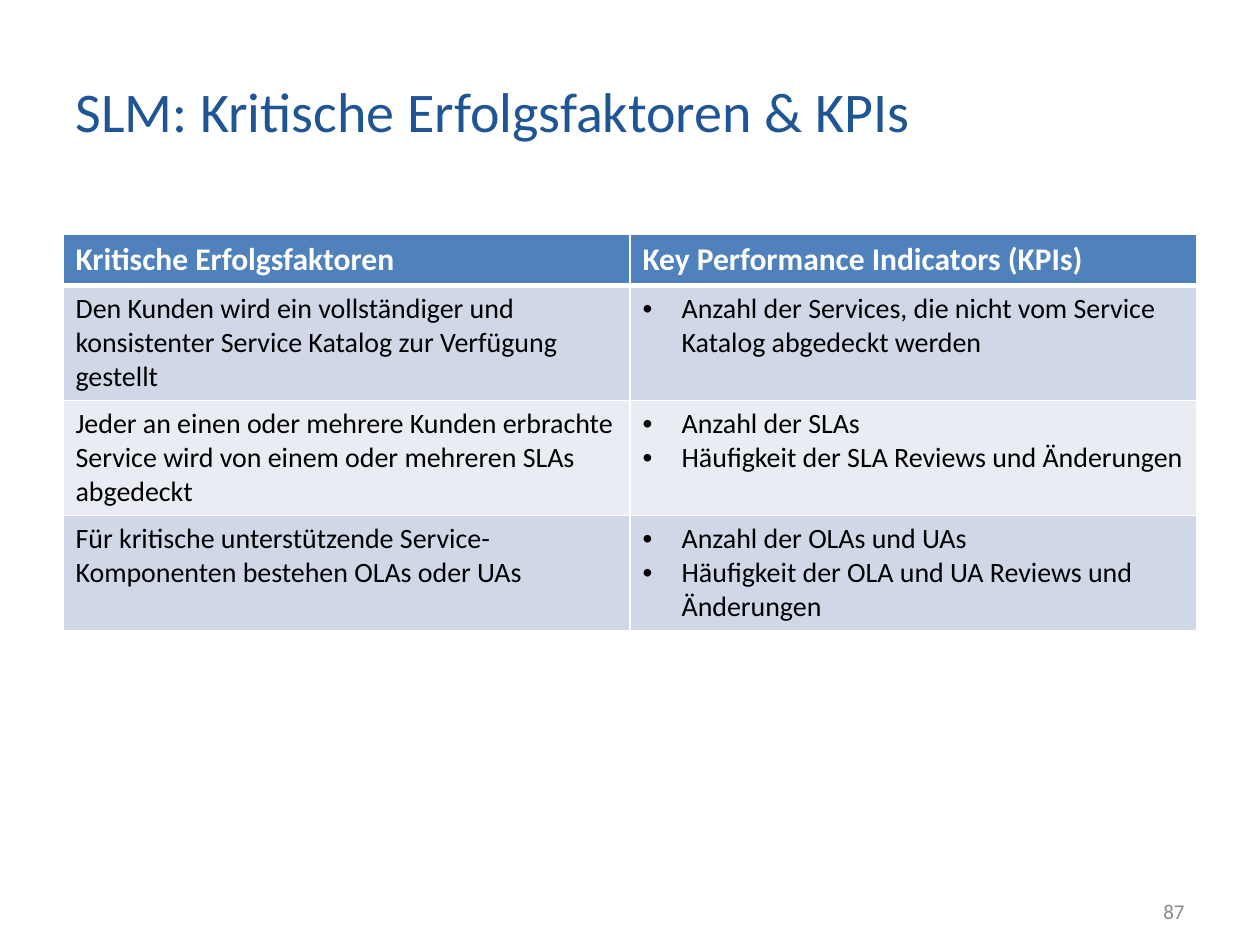
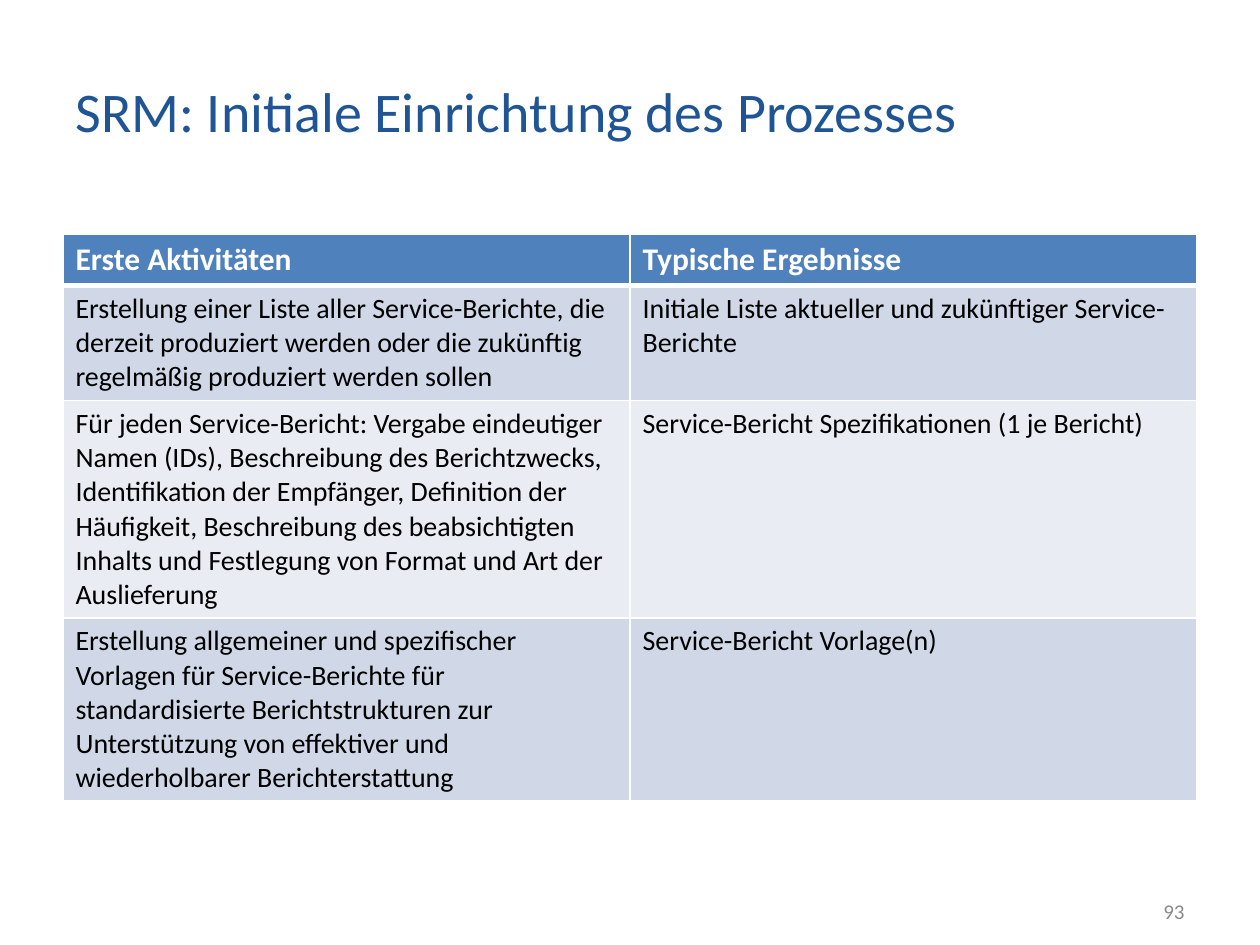
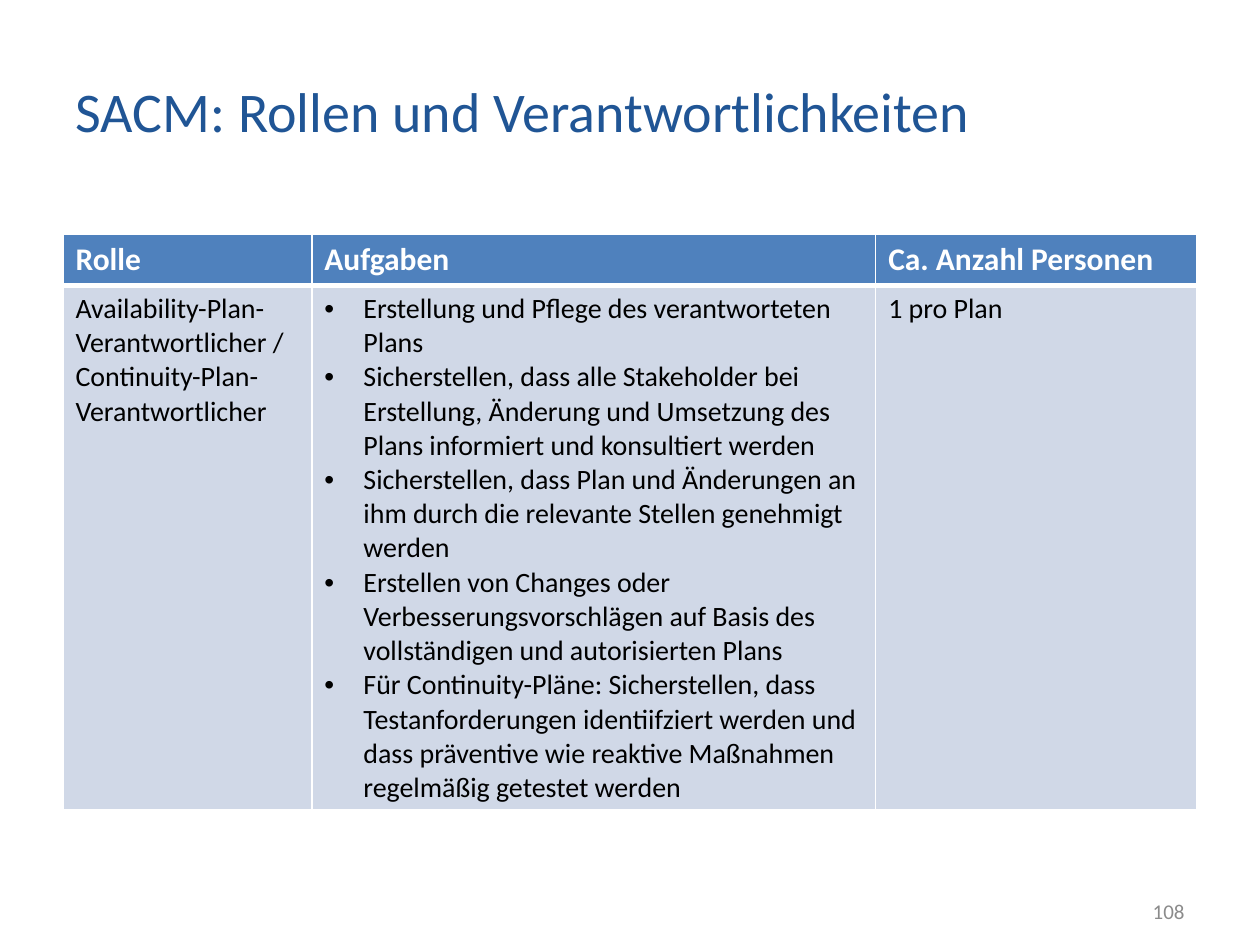
from lxml import etree
from pptx import Presentation
from pptx.dml.color import RGBColor
from pptx.enum.text import MSO_ANCHOR, PP_ALIGN
from pptx.oxml.ns import qn
from pptx.util import Inches, Pt

MIDDLE = MSO_ANCHOR.MIDDLE
LEFT, RIGHT = PP_ALIGN.LEFT, PP_ALIGN.RIGHT
COLS, ROWS = 100, 75
HEADER_ROWS, LINE_ROWS, PADDING_ROWS = 4.05, 2.71, 1
FONT = "Calibri"
COLORS = {
    "title": "205595",
    "header": "4F81BD",
    "odd": "D0D8E7",
    "even": "E9ECF3",
    "white": "FFFFFF",
    "text": "000000",
    "number": "8B8B8B",
}
THIN, THICK = 0.96, 3
INDENT = Inches(0.31)


def add_color(parent, color):
    fill = etree.SubElement(parent, qn("a:solidFill"))
    etree.SubElement(fill, qn("a:srgbClr"), val=COLORS[color])


def add_bullet(p):
    pPr = p._p.get_or_add_pPr()
    pPr.set("marL", str(INDENT))
    pPr.set("indent", str(-INDENT))
    etree.SubElement(pPr, qn("a:buFont"), typeface="Arial")
    etree.SubElement(pPr, qn("a:buChar"), char="•")


def write(tf, text, size=16, color="text", bold=False, align=LEFT):
    bulleted = isinstance(text, list)
    for i, line in enumerate(text if bulleted else [text]):
        p = tf.add_paragraph() if i else tf.paragraphs[0]
        p.alignment = align
        if bulleted:
            add_bullet(p)
        r = p.add_run()
        r.text = line
        r.font.name = FONT
        r.font.size = Pt(size)
        r.font.bold = bold
        r.font.color.rgb = RGBColor.from_string(COLORS[color])


def add_borders(cell, top, bottom):
    tcPr = cell._tc.get_or_add_tcPr()
    for side, width in (("L", THIN), ("R", THIN), ("T", top), ("B", bottom)):
        ln = etree.SubElement(tcPr, qn(f"a:ln{side}"), w=str(Pt(width)))
        add_color(ln, "white")


class Deck:
    def __init__(self):
        self.prs = Presentation()
        self.prs.slide_width = Inches(10)
        self.prs.slide_height = Inches(7.5)
        self.s = None

    def x(self, cols):
        return round(self.prs.slide_width * cols / COLS)

    def y(self, rows):
        return round(self.prs.slide_height * rows / ROWS)

    def text(self, text, left, top, width, height, **fmt):
        sp = self.s.shapes.add_textbox(
            self.x(left), self.y(top), self.x(width), self.y(height))
        tf = sp.text_frame
        tf.word_wrap = True
        tf.vertical_anchor = MIDDLE
        write(tf, text, **fmt)

    def slide(self, title, number):
        self.s = self.prs.slides.add_slide(self.prs.slide_layouts[6])
        self.text(title, 5, 3, 80.4, 11.5, size=32, color="title")
        self.text(number, 71.7, 70.3, 23.3, 4, size=12, color="number", align=RIGHT)

    def table(self, rows, widths, lines):
        heights = [HEADER_ROWS] + [PADDING_ROWS + LINE_ROWS * n for n in lines]
        table = self.s.shapes.add_table(
            len(rows), len(widths), self.x(5), self.y(18.6),
            self.x(sum(widths)), self.y(sum(heights))).table
        table.horz_banding = False
        for column, width in zip(table.columns, widths):
            column.width = self.x(width)
        for i, (row, height) in enumerate(zip(rows, heights)):
            table.rows[i].height = self.y(height)
            for j, text in enumerate(row):
                self.cell(table.cell(i, j), text, i)

    def cell(self, cell, text, row):
        add_borders(cell, THICK if row == 1 else THIN, THIN if row else THICK)
        fill = ("odd" if row % 2 else "even") if row else "header"
        cell.fill.solid()
        cell.fill.fore_color.rgb = RGBColor.from_string(COLORS[fill])
        if row:
            write(cell.text_frame, text)
        else:
            write(cell.text_frame, text, size=18, color="white", bold=True)


def main():
    deck = Deck()

    deck.slide("SLM: Kritische Erfolgsfaktoren & KPIs", "87")
    deck.table([
        ("Kritische Erfolgsfaktoren", "Key Performance Indicators (KPIs)"),
        ("Den Kunden wird ein vollständiger und konsistenter Service Katalog "
         "zur Verfügung gestellt",
         ["Anzahl der Services, die nicht vom Service Katalog abgedeckt werden"]),
        ("Jeder an einen oder mehrere Kunden erbrachte Service wird von einem "
         "oder mehreren SLAs abgedeckt",
         ["Anzahl der SLAs", "Häufigkeit der SLA Reviews und Änderungen"]),
        ("Für kritische unterstützende Service-Komponenten bestehen OLAs oder UAs",
         ["Anzahl der OLAs und UAs",
          "Häufigkeit der OLA und UA Reviews und Änderungen"]),
    ], widths=[45, 45], lines=[3, 3, 3])

    deck.slide("SRM: Initiale Einrichtung des Prozesses", "93")
    deck.table([
        ("Erste Aktivitäten", "Typische Ergebnisse"),
        ("Erstellung einer Liste aller Service-Berichte, die derzeit produziert "
         "werden oder die zukünftig regelmäßig produziert werden sollen",
         "Initiale Liste aktueller und zukünftiger Service-Berichte"),
        ("Für jeden Service-Bericht: Vergabe eindeutiger Namen (IDs), "
         "Beschreibung des Berichtzwecks, Identifikation der Empfänger, "
         "Definition der Häufigkeit, Beschreibung des beabsichtigten Inhalts "
         "und Festlegung von Format und Art der Auslieferung",
         "Service-Bericht Spezifikationen (1 je Bericht)"),
        ("Erstellung allgemeiner und spezifischer Vorlagen für Service-Berichte "
         "für standardisierte Berichtstrukturen zur Unterstützung von "
         "effektiver und wiederholbarer Berichterstattung",
         "Service-Bericht Vorlage(n)"),
    ], widths=[45, 45], lines=[3, 6, 5])

    deck.slide("SACM: Rollen und Verantwortlichkeiten", "108")
    deck.table([
        ("Rolle", "Aufgaben", "Ca. Anzahl Personen"),
        ("Availability-Plan-Verantwortlicher / Continuity-Plan-Verantwortlicher",
         ["Erstellung und Pflege des verantworteten Plans",
          "Sicherstellen, dass alle Stakeholder bei Erstellung, Änderung und "
          "Umsetzung des Plans informiert und konsultiert werden",
          "Sicherstellen, dass Plan und Änderungen an ihm durch die relevante "
          "Stellen genehmigt werden",
          "Erstellen von Changes oder Verbesserungsvorschlägen auf Basis des "
          "vollständigen und autorisierten Plans",
          "Für Continuity-Pläne: Sicherstellen, dass Testanforderungen "
          "identiifziert werden und dass präventive wie reaktive Maßnahmen "
          "regelmäßig getestet werden"],
         "1 pro Plan"),
    ], widths=[19.75, 44.75, 25.5], lines=[15])

    deck.prs.save("out.pptx")


if __name__ == "__main__":
    main()
